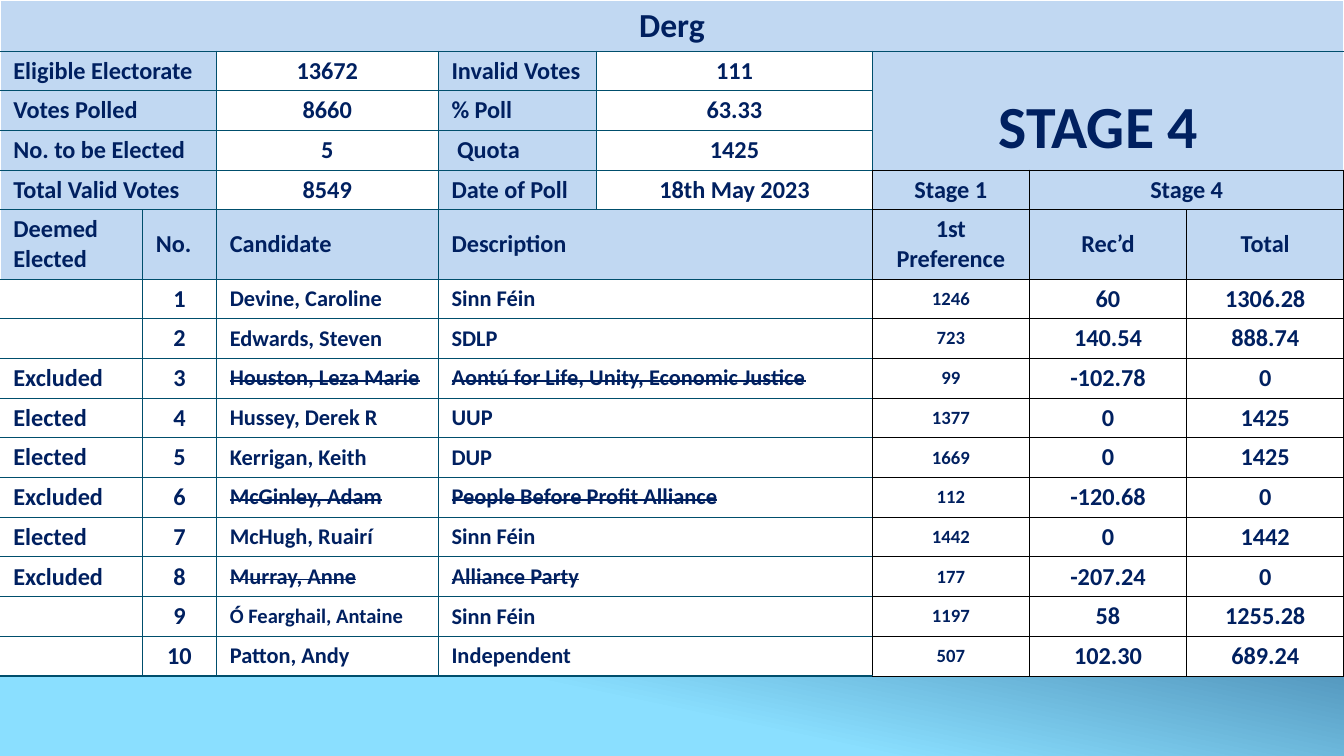
from pptx import Presentation, util as u
from pptx.dml.color import RGBColor
from pptx.enum import text
from pptx.oxml import parse_xml
from pptx.oxml.ns import nsdecls

PALE, WHITE, TEAL, BLACK, NAVY = "C1D8F2", "FFFFFF", "004E6C", "000000", "002060"
LINE_WIDTHS = {WHITE: 1, TEAL: 0.75, BLACK: 0.5}
HARD_SPACE = chr(160)
COLUMNS = [1.06, 0.55, 1.65, 1.18, 2.05, 1.17, 1.17, 1.17]
ROWS = [0.37] + [0.28] * 4 + [0.48] + [0.28] * 10
FIRST_CANDIDATE_ROW = 6
TALLY_ROW, TALLY_COL = 4, 5

SUMMARY = [
    ("Eligible Electorate", "13672", "Invalid Votes", "111"),
    ("Votes Polled", "8660", "% Poll", "63.33"),
    ("No. to be Elected", "5", HARD_SPACE + "Quota", "1425"),
    ("Total Valid Votes", "8549", "Date of Poll", "18th May 2023"),
]
CANDIDATES = [
    ("", "Devine, Caroline", "Sinn Féin", "1246", "60", "1306.28"),
    ("", "Edwards, Steven", "SDLP", "723", "140.54", "888.74"),
    ("Excluded", "Houston, Leza Marie", "Aontú for Life, Unity, Economic Justice",
     "99", "-102.78", "0"),
    ("Elected", "Hussey, Derek R", "UUP", "1377", "0", "1425"),
    ("Elected", "Kerrigan, Keith", "DUP", "1669", "0", "1425"),
    ("Excluded", "McGinley, Adam", "People Before Profit Alliance", "112", "-120.68", "0"),
    ("Elected", "McHugh, Ruairí", "Sinn Féin", "1442", "0", "1442"),
    ("Excluded", "Murray, Anne", "Alliance Party", "177", "-207.24", "0"),
    ("", "Ó Fearghail, Antaine", "Sinn Féin", "1197", "58", "1255.28"),
    ("", "Patton, Andy", "Independent", "507", "102.30", "689.24"),
]


def color(value):
    return RGBColor.from_string(value)


def edge_colors(row, col, end):
    """Border colours (left, right, top, bottom) of a cell spanning columns col to end."""
    if col >= TALLY_COL and row >= TALLY_ROW:
        return BLACK, BLACK, BLACK, BLACK
    left = WHITE if col == 0 else TEAL
    top = WHITE if row == 0 else TEAL
    right = TEAL
    if end == len(COLUMNS):
        right = WHITE
    elif end == TALLY_COL and row >= TALLY_ROW:
        right = BLACK
    bottom = BLACK if col >= TALLY_COL else TEAL
    return left, right, top, bottom


class ResultSheet:
    font = "Calibri"
    size = 13

    def __init__(self, slide):
        self.slide = slide

    def background(self, stops, angle):
        fill = self.slide.background.fill
        fill.gradient()
        fill.gradient_angle = angle
        for stop, (position, value) in zip(fill.gradient_stops, stops):
            stop.position = position
            stop.color.rgb = color(value)

    def table(self, columns, rows):
        frame = self.slide.shapes.add_table(
            len(rows), len(columns), 0, 0, u.Inches(sum(columns)), u.Inches(sum(rows)))
        self.grid = frame.table
        self.grid.first_row = self.grid.horz_banding = False
        for column, width in zip(self.grid.columns, columns):
            column.width = u.Inches(width)
        for row, height in zip(self.grid.rows, rows):
            row.height = u.Inches(height)

    def borders(self, cell, colors):
        tc_pr = cell._tc.get_or_add_tcPr()
        for side, value in zip("LRTB", colors):
            tc_pr.append(parse_xml(
                f'<a:ln{side} {nsdecls("a")} w="{u.Pt(LINE_WIDTHS[value])}">'
                f'<a:solidFill><a:srgbClr val="{value}"/></a:solidFill></a:ln{side}>'))

    def run(self, p, content, size, strike=False):
        r = p.add_run()
        r.text = content
        r.font.name, r.font.size, r.font.bold = self.font, u.Pt(size), True
        r.font.color.rgb = color(NAVY)
        if strike:
            r.font._element.set("strike", "sngStrike")

    def cell(self, row, col, content, fill=WHITE, size=size, center=False,
             span=(1, 1), strike=False):
        """Fill one cell, merged over span (rows, columns); return its paragraph."""
        cell = self.grid.cell(row, col)
        end = col + span[1]
        if span != (1, 1):
            cell.merge(self.grid.cell(row + span[0] - 1, end - 1))
        self.borders(cell, edge_colors(row, col, end))
        cell.fill.solid()
        cell.fill.fore_color.rgb = color(fill)
        cell.vertical_anchor = text.MSO_ANCHOR.MIDDLE
        cell.margin_left = cell.margin_right = u.Inches(0.1)
        cell.margin_top = cell.margin_bottom = u.Inches(0.3 / 8)
        p = cell.text_frame.paragraphs[0]
        if center:
            p.alignment = text.PP_ALIGN.CENTER
        if content:
            self.run(p, content, size, strike)
        else:
            p._p.get_or_add_endParaRPr().set("sz", str(size * 100))
        return p


def add_summary(sheet):
    sheet.cell(0, 0, "Derg", PALE, 18, center=True, span=(1, len(COLUMNS)))
    for row, (label, value, label2, value2) in enumerate(SUMMARY, 1):
        sheet.cell(row, 0, label, PALE, span=(1, 2))
        sheet.cell(row, 2, value, center=True)
        sheet.cell(row, 3, label2, PALE)
        sheet.cell(row, 4, value2, center=True)
    p = sheet.cell(1, TALLY_COL, "STAGE 4" + HARD_SPACE, PALE, 32, center=True, span=(3, 3))
    sheet.run(p, HARD_SPACE, sheet.size)
    sheet.grid.cell(1, TALLY_COL).vertical_anchor = text.MSO_ANCHOR.BOTTOM


def add_headings(sheet):
    sheet.cell(TALLY_ROW, 5, "Stage 1", PALE, center=True)
    sheet.cell(TALLY_ROW, 6, "Stage 4", PALE, center=True, span=(1, 2))
    row = FIRST_CANDIDATE_ROW - 1
    for col, heading in enumerate(("Deemed Elected", "No.", "Candidate")):
        sheet.cell(row, col, heading, PALE)
    sheet.cell(row, 3, "Description", PALE, span=(1, 2))
    for col, heading in enumerate(("1st Preference", "Rec’d", "Total"), TALLY_COL):
        sheet.cell(row, col, heading, PALE, center=True)


def add_candidates(sheet):
    for number, (status, name, party, first, received, total) in enumerate(CANDIDATES, 1):
        row = FIRST_CANDIDATE_ROW + number - 1
        out = status == "Excluded"
        name_size = 11 if name == "Ó Fearghail, Antaine" else 12
        sheet.cell(row, 0, status)
        sheet.cell(row, 1, str(number), center=True)
        sheet.cell(row, 2, name, size=name_size, strike=out)
        sheet.cell(row, 3, party, size=12, span=(1, 2), strike=out)
        sheet.cell(row, 5, first, size=10, center=True)
        sheet.cell(row, 6, received, center=True)
        sheet.cell(row, 7, total, center=True)


def main():
    prs = Presentation()
    prs.slide_width = u.Inches(10)
    prs.slide_height = u.Inches(10 * 9 / 16)
    sheet = ResultSheet(prs.slides.add_slide(prs.slide_layouts[6]))
    sheet.background([(0.42, "0D3868"), (0.82, "8ADFFF")], 360 - 102)
    sheet.table(COLUMNS, ROWS)
    add_summary(sheet)
    add_headings(sheet)
    add_candidates(sheet)
    prs.save("out.pptx")


if __name__ == "__main__":
    main()
